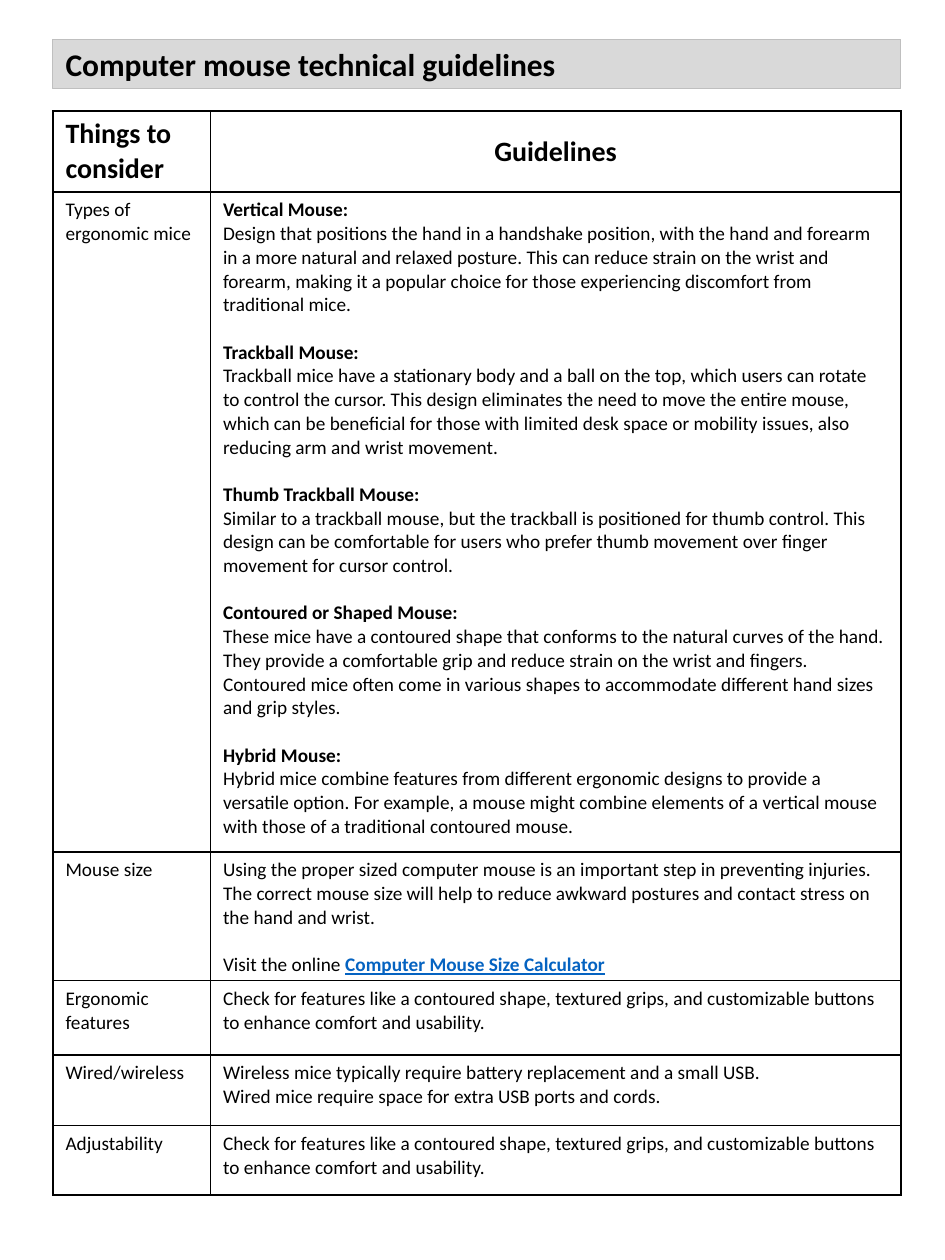
from dataclasses import dataclass

from lxml.etree import SubElement
from pptx import Presentation
from pptx.dml.color import RGBColor
from pptx.enum.shapes import MSO_SHAPE as Shape
from pptx.enum.text import MSO_ANCHOR as Anchor, MSO_AUTO_SIZE as AutoSize, PP_ALIGN as Align
from pptx.oxml.ns import qn
from pptx.util import Inches, Pt


@dataclass(frozen=True)
class Theme:
    font: str = "Calibri"
    ink: str = "000000"
    link: str = "0563C1"
    bar: str = "D9D9D9"
    bar_line: str = "BFBFBF"
    title: float = 18
    header: float = 16
    body: float = 11
    gap: float = 13.4  # one body line
    border: float = 1


@dataclass(frozen=True)
class Run:
    text: str
    bold: bool = False
    link: bool = False


@dataclass(frozen=True)
class Para:
    runs: tuple[Run, ...]
    gap: bool = False


@dataclass(frozen=True)
class Row:
    topic: str
    guidelines: list[Para]
    height: float


THEME = Theme()
LEFT, WIDTH = 0.42, 6.73
COLUMNS = (1.25, 5.48)
HEADER_HEIGHT = 0.64

MOUSE_TYPES = {
    "Vertical Mouse:": "Design that positions the hand in a handshake position, with the hand and "
    "forearm in a more natural and relaxed posture. This can reduce strain on the wrist and forearm, "
    "making it a popular choice for those experiencing discomfort from traditional mice.",
    "Trackball Mouse:": "Trackball mice have a stationary body and a ball on the top, which users can "
    "rotate to control the cursor. This design eliminates the need to move the entire mouse, which can "
    "be beneficial for those with limited desk space or mobility issues, also reducing arm and wrist "
    "movement.",
    "Thumb Trackball Mouse:": "Similar to a trackball mouse, but the trackball is positioned for thumb "
    "control. This design can be comfortable for users who prefer thumb movement over finger movement "
    "for cursor control.",
    "Contoured or Shaped Mouse:": "These mice have a contoured shape that conforms to the natural "
    "curves of the hand. They provide a comfortable grip and reduce strain on the wrist and fingers. "
    "Contoured mice often come in various shapes to accommodate different hand sizes and grip styles.",
    "Hybrid Mouse:": "Hybrid mice combine features from different ergonomic designs to provide a "
    "versatile option. For example, a mouse might combine elements of a vertical mouse with those of a "
    "traditional contoured mouse.",
}
FEATURES = ("Check for features like a contoured shape, textured grips, and customizable buttons "
            "to enhance comfort and usability.")


def plain(text: str, bold: bool = False, gap: bool = False) -> Para:
    return Para((Run(text, bold),), gap)


def mouse_type_paras() -> list[Para]:
    paras = []
    for name, description in MOUSE_TYPES.items():
        paras += [plain(name, bold=True, gap=bool(paras)), plain(description)]
    return paras


ROWS = [
    Row("Types of ergonomic mice", mouse_type_paras(), 5.24),
    Row("Mouse size", [
        plain("Using the proper sized computer mouse is an important step in preventing injuries."),
        plain("The correct mouse size will help to reduce awkward postures and contact stress on "
              "the hand and wrist."),
        Para((Run("Visit the online "),
              Run("Computer Mouse Size Calculator", bold=True, link=True)), gap=True),
    ], 1.02),
    Row("Ergonomic features", [plain(FEATURES)], 0.59),
    Row("Wired/wireless", [
        plain("Wireless mice typically require battery replacement and a small USB."),
        plain("Wired mice require space for extra USB ports and cords."),
    ], 0.56),
    Row("Adjustability", [plain(FEATURES)], 0.55),
]


def write_paras(frame, paras: list[Para], size: float, align: Align = Align.LEFT) -> None:
    for index, item in enumerate(paras):
        para = frame.paragraphs[0] if index == 0 else frame.add_paragraph()
        para.alignment = align
        para.space_before = Pt(THEME.gap if item.gap else 0)
        for run in item.runs:
            span = para.add_run()
            span.text = run.text
            formats = {"name": THEME.font, "size": Pt(size), "bold": run.bold, "underline": run.link}
            for name, value in formats.items():
                setattr(span.font, name, value)
            span.font.color.rgb = RGBColor.from_string(THEME.link if run.link else THEME.ink)


def style_cell(cell) -> None:
    properties = cell._tc.get_or_add_tcPr()
    for side in ("a:lnL", "a:lnR", "a:lnT", "a:lnB"):
        line = SubElement(properties, qn(side), w=str(Pt(THEME.border)))
        SubElement(SubElement(line, qn("a:solidFill")), qn("a:srgbClr"), val=THEME.ink)
    cell.fill.background()


def draw_title(page, text: str) -> None:
    # Grey bar behind the title
    bar = page.shapes.add_shape(Shape.RECTANGLE, Inches(LEFT), Inches(0.31), Inches(WIDTH), Inches(0.39))
    bar.shadow.inherit = False
    bar.fill.solid()
    bar.fill.fore_color.rgb = RGBColor.from_string(THEME.bar)
    bar.line.color.rgb = RGBColor.from_string(THEME.bar_line)
    bar.line.width = Pt(0.5)

    # Title placeholder in front of the bar
    title = page.shapes.title
    title.element.addprevious(bar.element)
    box = {"left": LEFT, "top": 0.31, "width": 5.4, "height": 0.4}
    for name, value in box.items():
        setattr(title, name, Inches(value))
    frame = title.text_frame
    formats = {"auto_size": AutoSize.NONE, "word_wrap": True, "vertical_anchor": Anchor.TOP}
    for name, value in formats.items():
        setattr(frame, name, value)
    write_paras(frame, [plain(text, bold=True)], THEME.title)


def draw_table(page) -> None:
    heights = [HEADER_HEIGHT] + [row.height for row in ROWS]
    table = page.shapes.add_table(len(heights), len(COLUMNS), Inches(LEFT), Inches(0.88),
                                  Inches(WIDTH), Inches(sum(heights))).table
    table.first_row = table.horz_banding = False
    for column, width in zip(table.columns, COLUMNS):
        column.width = Inches(width)
    for table_row, height in zip(table.rows, heights):
        table_row.height = Inches(height)
    for cell in table.iter_cells():
        style_cell(cell)

    # Header row
    topic, guidelines = table.rows[0].cells
    write_paras(topic.text_frame, [plain("Things to consider", bold=True)], THEME.header)
    write_paras(guidelines.text_frame, [plain("Guidelines", bold=True)], THEME.header, Align.CENTER)
    guidelines.vertical_anchor = Anchor.MIDDLE

    # Guideline rows
    for index, row in enumerate(ROWS, start=1):
        for column, paras in enumerate(([plain(row.topic)], row.guidelines)):
            cell = table.cell(index, column)
            cell.margin_bottom = Inches(0.02)
            write_paras(cell.text_frame, paras, THEME.body)


def main() -> None:
    deck = Presentation()
    deck.slide_width, deck.slide_height = Inches(7.5), Inches(10)
    page = deck.slides.add_slide(deck.slide_layouts[5])
    draw_title(page, "Computer mouse technical guidelines")
    draw_table(page)
    deck.save("out.pptx")


if __name__ == "__main__":
    main()
